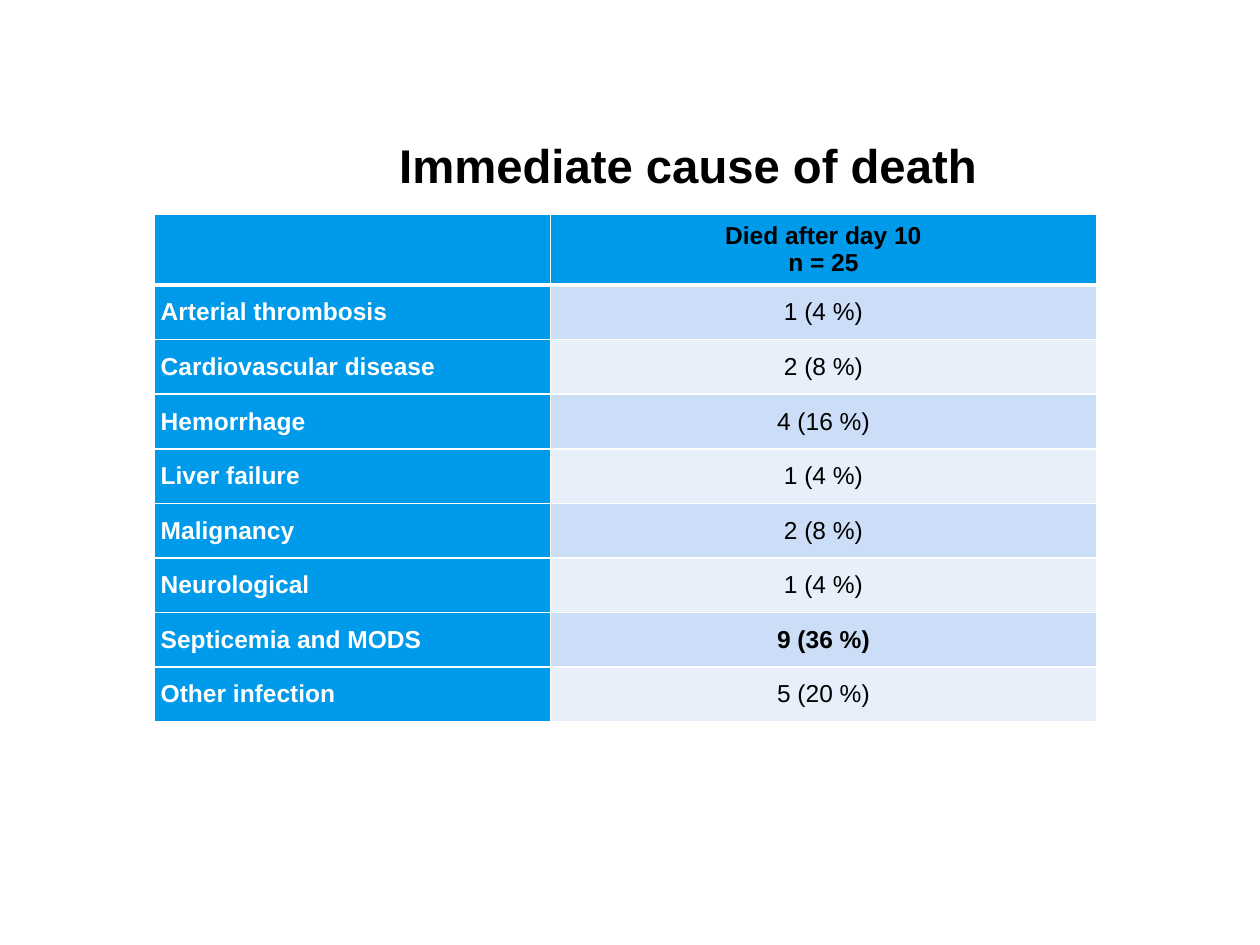
from lxml import etree
from pptx import Presentation
from pptx import util as u
from pptx.dml.color import RGBColor
from pptx.enum import text
from pptx.oxml.ns import qn

COLORS = {"black": "000000", "white": "FFFFFF", "header": "009AEB",
          "dark_band": "CCDEF7", "light_band": "E7EFFB"}
CAUSES = [
    ("Arterial thrombosis", "1 (4 %)"),
    ("Cardiovascular disease", "2 (8 %)"),
    ("Hemorrhage", "4 (16 %)"),
    ("Liver failure", "1 (4 %)"),
    ("Malignancy", "2 (8 %)"),
    ("Neurological", "1 (4 %)"),
    ("Septicemia and MODS", "9 (36 %)"),
    ("Other infection", "5 (20 %)"),
]
MAIN_CAUSE = "Septicemia and MODS"
LEFT, CENTER = text.PP_ALIGN.LEFT, text.PP_ALIGN.CENTER


class SlideBuilder:
    """Holds the style and the current slide."""

    font_name = "Arial"

    def __init__(self, slide):
        self.slide = slide

    def add_lines(self, frame, lines, size, color, bold, align, spacing=None):
        for index, line in enumerate(lines):
            paragraph = frame.add_paragraph() if index else frame.paragraphs[0]
            paragraph.alignment = align
            if spacing:
                paragraph.line_spacing = spacing
            run = paragraph.add_run()
            run.text = line
            run.font.name = self.font_name
            run.font.size = u.Pt(size)
            run.font.bold = bold
            run.font.color.rgb = RGBColor.from_string(COLORS[color])

    def title(self, line, left, top, width, height):
        box = self.slide.shapes.add_textbox(u.Cm(left), u.Cm(top), u.Cm(width), u.Cm(height))
        frame = box.text_frame
        frame.word_wrap = True
        frame.vertical_anchor = text.MSO_ANCHOR.MIDDLE
        frame.margin_left = frame.margin_right = frame.margin_top = frame.margin_bottom = 0
        self.add_lines(frame, [line], 27, "black", True, CENTER, 0.9)

    def table(self, left, top, widths, heights):
        frame = self.slide.shapes.add_table(
            len(heights), len(widths), u.Cm(left), u.Cm(top),
            u.Cm(sum(widths)), u.Cm(sum(heights)))
        for column, width in zip(frame.table.columns, widths):
            column.width = u.Cm(width)
        for row, height in zip(frame.table.rows, heights):
            row.height = u.Cm(height)
        return frame.table

    def cell(self, cell, lines, fill, color="black", bold=True, align=CENTER, top=1, bottom=1):
        cell.margin_left = cell.margin_right = u.Cm(0.14)
        cell.margin_top = cell.margin_bottom = u.Cm(0.12)
        cell.vertical_anchor = text.MSO_ANCHOR.MIDDLE
        self.borders(cell, {"L": 1, "R": 1, "T": top, "B": bottom})
        cell.fill.solid()
        cell.fill.fore_color.rgb = RGBColor.from_string(COLORS[fill])
        self.add_lines(cell.text_frame, lines, 14, color, bold, align)

    def borders(self, cell, widths):
        properties = cell._tc.get_or_add_tcPr()
        for side, width in widths.items():
            line = etree.SubElement(properties, qn(f"a:ln{side}"), w=str(u.Pt(width)))
            fill = etree.SubElement(line, qn("a:solidFill"))
            etree.SubElement(fill, qn("a:srgbClr"), val=COLORS["white"])


def main():
    presentation = Presentation()
    presentation.slide_width, presentation.slide_height = u.Cm(25.4), u.Cm(19.05)
    builder = SlideBuilder(presentation.slides.add_slide(presentation.slide_layouts[6]))
    builder.title("Immediate cause of death", 3.81, 2.34, 20.12, 2.11)

    table = builder.table(3.1, 4.32, [8, 11], [1.37] + [1.1] * len(CAUSES))
    builder.cell(table.cell(0, 0), [], "header", bottom=3)
    builder.cell(table.cell(0, 1), ["Died after day 10", "n = 25"], "header", bottom=3)
    for row, (cause, deaths) in enumerate(CAUSES, start=1):
        top = 3 if row == 1 else 1
        band = "dark_band" if row % 2 else "light_band"
        builder.cell(table.cell(row, 0), [cause], "header", "white", align=LEFT, top=top)
        builder.cell(table.cell(row, 1), [deaths], band, bold=cause == MAIN_CAUSE, top=top)

    presentation.save("out.pptx")


if __name__ == "__main__":
    main()
